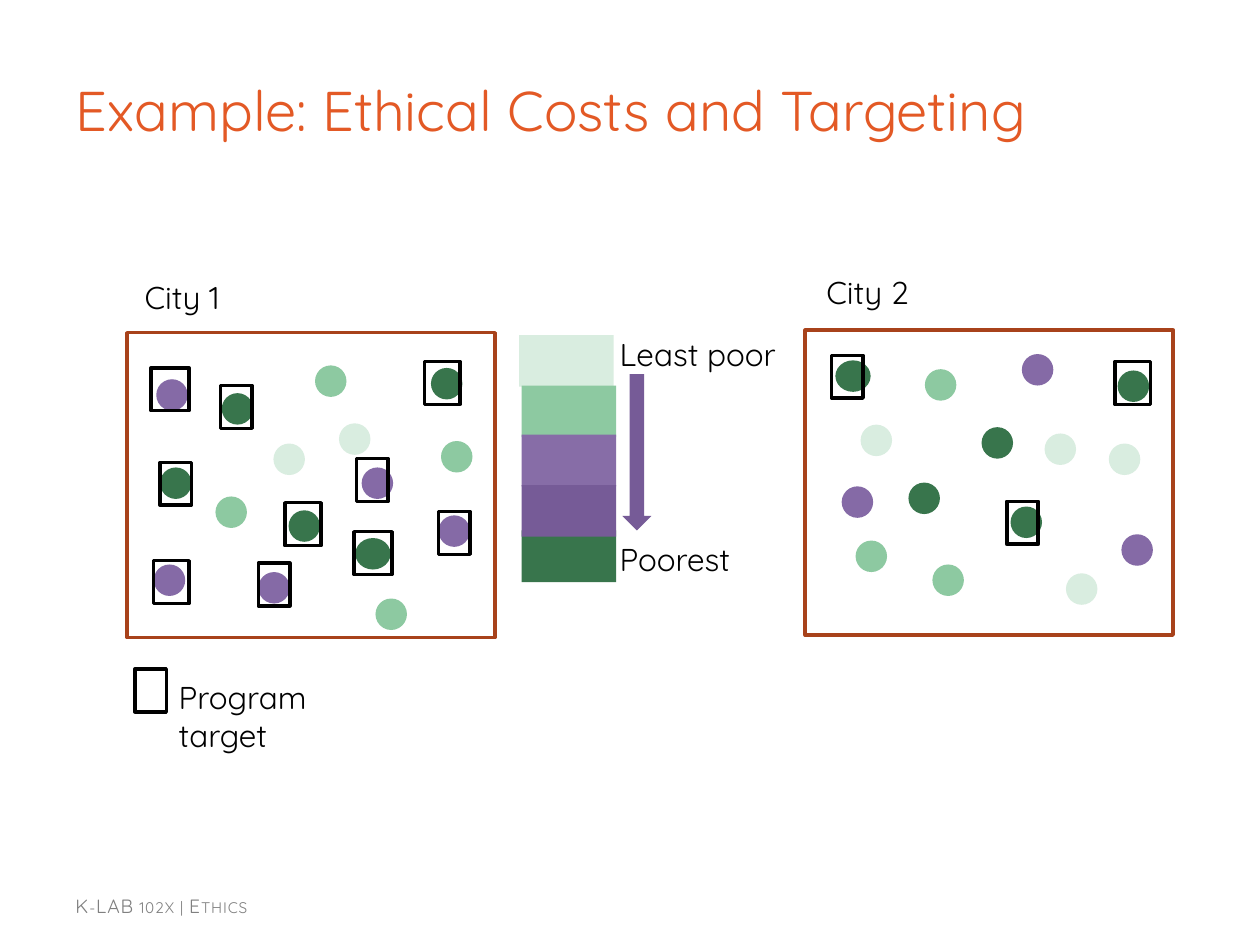
"""Build a slide comparing program targeting in two cities by poverty level."""
import pptx
import pptx.dml.color
import pptx.enum.shapes
import pptx.enum.text
import pptx.util

THEME = {
    "font": "Quicksand", "title_size": 32, "label_size": 18, "footer_size": 11, "line": 2,
    "title": "E35925", "city": "A8421B", "black": "000000", "footer": "808080",
    "least": "D9EDE0", "less": "8DC9A1", "middle": "876DA7", "more": "765B97",
    "poorest": "38754C", "purple": "856AA6",
}
SHAPES = pptx.enum.shapes.MSO_SHAPE

deck = pptx.Presentation()
deck.slide_width = pptx.util.Inches(10)
deck.slide_height = pptx.util.Inches(7.5)
COLUMN = deck.slide_width / 100
ROW = deck.slide_height / 75
page = deck.slides.add_slide(deck.slide_layouts[5])


def add_figure(kind, left, top, width, height, fill=None, line=None):
    figure = page.shapes.add_shape(
        kind, round(left * COLUMN), round(top * ROW), round(width * COLUMN), round(height * ROW))
    figure.shadow.inherit = False
    if fill:
        figure.fill.solid()
        figure.fill.fore_color.rgb = pptx.dml.color.RGBColor.from_string(THEME[fill])
    else:
        figure.fill.background()
    if line:
        figure.line.color.rgb = pptx.dml.color.RGBColor.from_string(THEME[line])
        figure.line.width = pptx.util.Pt(THEME["line"])
    else:
        figure.line.fill.background()


def write_text(box, text, left, top, width, height, size, color):
    box.left, box.width = round(left * COLUMN), round(width * COLUMN)
    box.top, box.height = round(top * ROW), round(height * ROW)
    box.text_frame.word_wrap = True
    box.text_frame.text = text
    para = box.text_frame.paragraphs[0]
    para.alignment = pptx.enum.text.PP_ALIGN.LEFT
    span = para.runs[0]
    span.font.name = THEME["font"]
    span.font.size = pptx.util.Pt(THEME[size])
    span.font.color.rgb = pptx.dml.color.RGBColor.from_string(THEME[color])
    return span


title = page.shapes.title
write_text(title, "Example: Ethical Costs and Targeting", 5, 2.2, 90, 12.9, "title_size", "title")
title.text_frame.vertical_anchor = pptx.enum.text.MSO_ANCHOR.MIDDLE

for left, top in [(10.1, 26.4), (63.9, 26.2)]:
    add_figure(SHAPES.RECTANGLE, left, top, 29.2, 24.2, line="city")

legend = [(41.2, 26.6, "least"), (41.4, 30.6, "less"), (41.4, 34.5, "middle"),
          (41.4, 38.5, "more"), (41.4, 42.1, "poorest")]
for left, top, color in sorted(legend, key=lambda band: band[2] == "more"):
    add_figure(SHAPES.RECTANGLE, left, top, 7.5, 4.1, fill=color)
add_figure(SHAPES.DOWN_ARROW, 49.4, 29.7, 2.3, 12.4, fill="more")

households = {
    "poorest": [(12.7, 37.1), (22.9, 40.5), (34.2, 29.2), (17.6, 31.2), (77.9, 33.9),
                (88.7, 29.4), (80.2, 40.2), (72.1, 38.3)],
    "less": [(17.1, 39.4), (35, 35), (29.8, 47.5), (25, 29), (67.9, 42.9), (73.4, 29.3),
             (74, 44.8)],
    "purple": [(28.7, 37.1), (20.5, 45.4), (12.2, 44.8), (34.8, 40.9), (12.4, 30.1),
               (89, 42.4), (81.1, 28.1), (66.8, 38.6)],
    "least": [(26.9, 33.6), (21.7, 35.2), (84.6, 45.5), (88, 35.2), (82.9, 34.4), (68.3, 33.7)],
}
for color, places in households.items():
    for left, top in places:
        add_figure(SHAPES.OVAL, left, top, 2.5, 2.5, fill=color)
for left, top in [(28.2, 42.7), (66.3, 28.6)]:
    add_figure(SHAPES.OVAL, left, top, 2.8, 2.5, fill="poorest")

targets = {
    2.5: [(12.7, 36.7), (10.7, 53.1), (20.5, 44.7), (28.3, 36.4), (34.8, 40.6), (17.5, 30.6),
          (66, 28.2), (79.9, 39.8)],
    2.8: [(33.7, 28.7), (12.2, 44.5), (88.5, 28.7)],
    2.9: [(22.6, 39.9)],
    3: [(28.1, 42.2), (12, 29.2)],
}
for width, places in targets.items():
    for left, top in places:
        add_figure(SHAPES.RECTANGLE, left, top, width, 3.4, line="black")

labels = [("City 1", 10.5, 21.6, 9.5), ("City 2", 64.6, 21.2, 10.5),
          ("Least poor", 48.2, 26.1, 16.9), ("Poorest", 48.2, 42.4, 11.7),
          ("Program target", 13.2, 53.3, 16)]
for text, left, top, width in labels:
    write_text(page.shapes.add_textbox(0, 0, 0, 0), text, left, top, width, 4,
               "label_size", "black")

footer = write_text(page.shapes.add_textbox(0, 0, 0, 0), "K-LAB 102x | Ethics",
                    5, 70.5, 75.2, 2.4, "footer_size", "footer")
footer.font._element.set("cap", "small")
footer.font._element.set("spc", "50")

deck.save("out.pptx")
